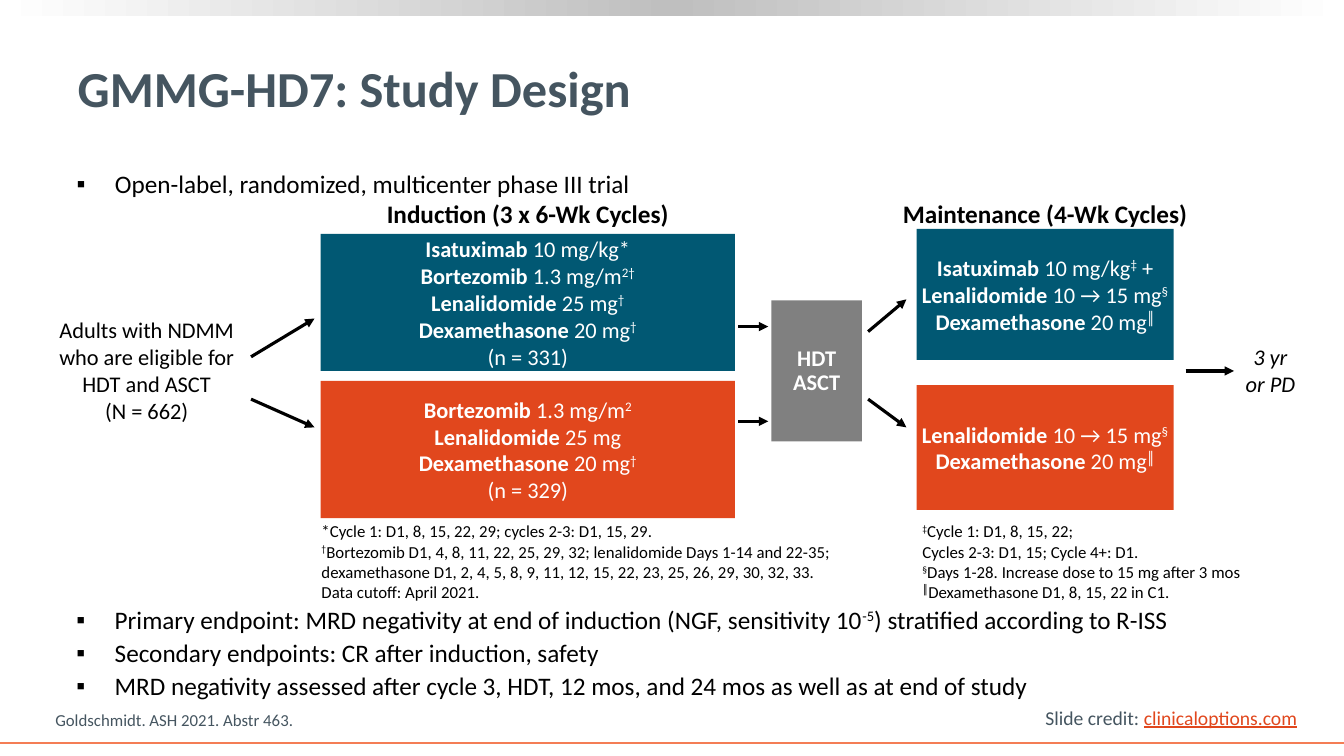
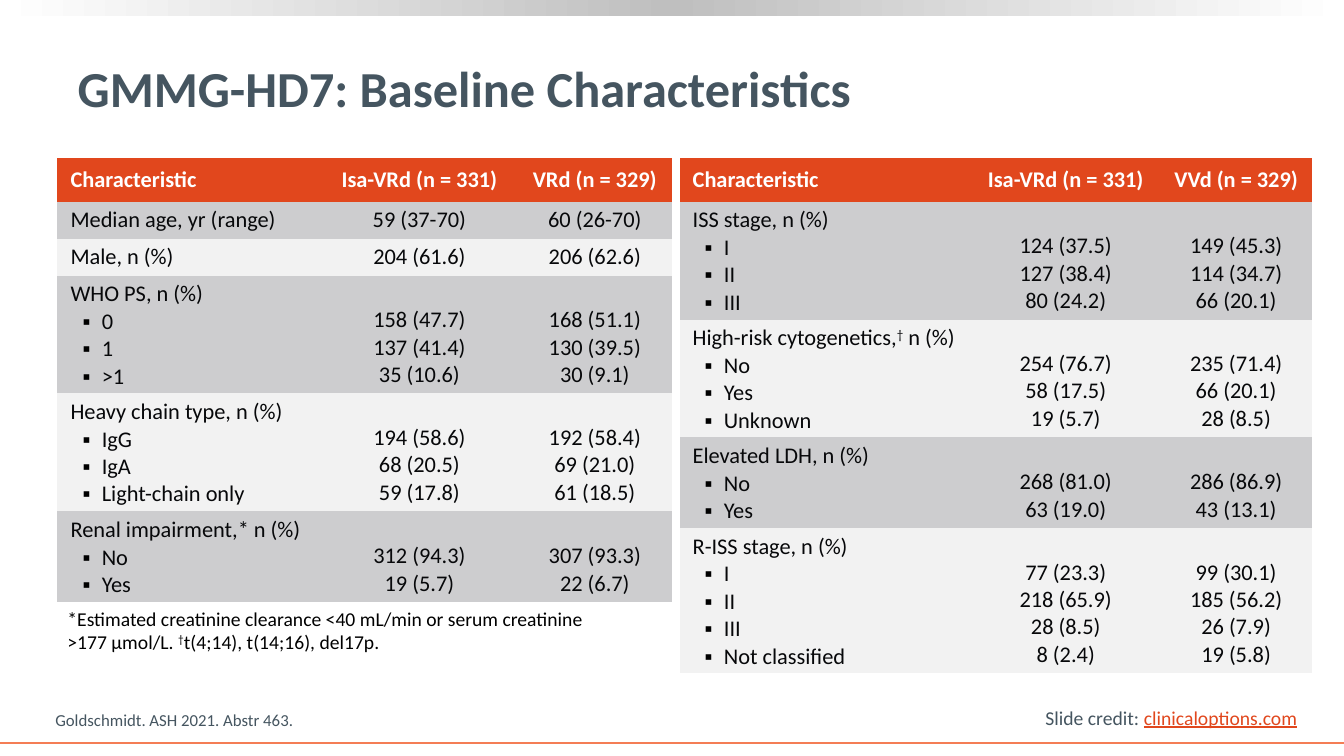
from copy import deepcopy

from lxml.etree import SubElement
from pptx import Presentation
from pptx.dml.color import RGBColor
from pptx.enum.shapes import MSO_CONNECTOR, MSO_SHAPE
from pptx.enum.text import MSO_ANCHOR, MSO_AUTO_SIZE, PP_ALIGN
from pptx.oxml.ns import qn
from pptx.util import Inches, Pt

FONT = "Calibri"
WHITE = RGBColor(0xFF, 0xFF, 0xFF)
BLACK = RGBColor(0x00, 0x00, 0x00)
INK = RGBColor(0x07, 0x08, 0x0A)
SLATE = RGBColor(0x45, 0x55, 0x60)
TEAL = RGBColor(0x01, 0x58, 0x73)
ORANGE = RGBColor(0xE1, 0x47, 0x1D)
CORAL = RGBColor(0xF4, 0x7D, 0x55)
GRAY = RGBColor(0x80, 0x80, 0x80)
SILVER = RGBColor(0xBF, 0xBF, 0xBF)
BANDS = (RGBColor(0xCD, 0xCD, 0xCF), RGBColor(0xF2, 0xF2, 0xF2))
NO_STYLE = "{2D5ABB26-0587-4C30-8999-92F81FD0307C}"

SLIDE_W, SLIDE_H = 13.33, 7.5


def inches(*lengths):
    return [Inches(n) for n in lengths]


# Text

def add_runs(p, markup, size, color, bold=False, italic=False):
    """Write markup as runs: ^raised^ and |bold|."""
    for i, part in enumerate(markup.split("^")):
        for j, piece in enumerate(part.split("|")):
            if not piece:
                continue
            r = p.add_run()
            r.text = piece
            r.font.name, r.font.size = FONT, Pt(size)
            r.font.color.rgb = color
            r.font.bold = bold or j % 2 == 1
            r.font.italic = italic
            if i % 2:
                r._r.get_or_add_rPr().set("baseline", "30000")


def add_bullet(p, indent, hanging):
    pPr = p._p.get_or_add_pPr()
    pPr.set("marL", str(Inches(indent)))
    pPr.set("indent", str(-Inches(hanging)))
    color = SubElement(pPr, qn("a:buClr"))
    SubElement(color, qn("a:srgbClr")).set("val", str(BLACK))
    SubElement(pPr, qn("a:buFont")).set("typeface", "Arial")
    SubElement(pPr, qn("a:buChar")).set("char", "▪")


def paragraphs(tf, lines):
    """Yield each line with its paragraph, adding paragraphs as needed."""
    for i, line in enumerate(lines):
        yield (tf.add_paragraph() if i else tf.paragraphs[0]), line


def write(tf, lines, size, color=BLACK, align=PP_ALIGN.LEFT, **style):
    for p, line in paragraphs(tf, lines):
        p.alignment = align
        add_runs(p, line, size, color, **style)


def write_bullets(tf, lines):
    tf.auto_size = MSO_AUTO_SIZE.NONE
    tf.word_wrap = True
    for i, (p, line) in enumerate(paragraphs(tf, lines)):
        p.line_spacing = 0.9
        p.space_before = Pt(4 if i else 0)
        add_bullet(p, 0.38, 0.38)
        add_runs(p, line, 18, BLACK)


def add_text(slide, box, lines, size, color=BLACK, wrap=True, **style):
    tf = slide.shapes.add_textbox(*inches(*box)).text_frame
    tf.word_wrap = wrap
    write(tf, lines, size, color, **style)
    return tf


# Shapes

def add_block(slide, box, fill, lines=(), **style):
    sp = slide.shapes.add_shape(MSO_SHAPE.RECTANGLE, *inches(*box))
    sp.shadow.inherit = False
    sp.line.fill.background()
    sp.fill.solid()
    sp.fill.fore_color.rgb = fill
    tf = sp.text_frame
    tf.word_wrap = False
    tf.vertical_anchor = MSO_ANCHOR.MIDDLE
    write(tf, lines, 16, WHITE, PP_ALIGN.CENTER, **style)
    return sp


def add_line(slide, start, end, color, width):
    line = slide.shapes.add_connector(MSO_CONNECTOR.STRAIGHT, *inches(*start, *end))
    line.line.color.rgb = color
    line.line.width = Pt(width)
    SubElement(line._element.spPr, qn("a:effectLst"))
    return line


def add_arrows(slide, x1, x2, *heights):
    """Draw one arrow from x1 to x2 for each (start y, end y)."""
    for y1, y2 in heights:
        arrow = add_line(slide, (x1, y1), (x2, y2), BLACK, 2.25)
        ln = arrow._element.spPr.find(qn("a:ln"))
        SubElement(ln, qn("a:tailEnd")).set("type", "triangle")


# Shared slide parts

def add_top_band(slide):
    sp = add_block(slide, (0, 0, SLIDE_W, 0.16), SILVER)
    sp.fill.gradient()
    sp.fill.gradient_angle = 0
    stops = sp._element.spPr.find(qn("a:gradFill")).find(qn("a:gsLst"))
    stops.insert(1, deepcopy(stops[0]))
    for stop, position, color in zip(sp.fill.gradient_stops, (0, 0.5, 1),
                                     (WHITE, SILVER, WHITE)):
        stop.position = position
        stop.color.rgb = color


def add_footer(slide):
    add_line(slide, (0, 7.37), (SLIDE_W, 7.37), CORAL, 1.5)
    source = add_text(slide, (0.45, 6.99, 8.59, 0.3),
                      ["Goldschmidt. ASH 2021. Abstr 463."], 12, SLATE)
    source.vertical_anchor = MSO_ANCHOR.BOTTOM
    credit = add_text(slide, (10.27, 6.95, 2.72, 0.34),
                      ["Slide credit: "], 14, SLATE, wrap=False)
    add_runs(credit.paragraphs[0], "clinicaloptions.com", 14, ORANGE)
    credit.paragraphs[0].runs[-1].font.underline = True


def place(shape, box):
    shape.left, shape.top, shape.width, shape.height = inches(*box)


def new_slide(prs, layout, title):
    slide = prs.slides.add_slide(prs.slide_layouts[layout])
    add_top_band(slide)
    place(slide.shapes.title, (0.67, 0.26, 11.89, 1.21))
    tf = slide.shapes.title.text_frame
    tf.auto_size = MSO_AUTO_SIZE.NONE
    tf.vertical_anchor = MSO_ANCHOR.MIDDLE
    write(tf, [title], 36, SLATE, bold=True)
    add_footer(slide)
    return slide


# Study design

def add_phase(slide, x, y, w, heading, arms, notes, notes_box):
    """Draw a treatment phase; arms are (offset, height, colour, lines)."""
    add_text(slide, (x - 0.4, y, w + 0.8, 0.4), [heading], 18,
             align=PP_ALIGN.CENTER, bold=True)
    for dy, h, fill, lines in arms:
        add_block(slide, (x, y + dy, w, h), fill, lines)
    dx, notes_w = notes_box
    add_text(slide, (x + dx, y + 3.2, notes_w, 0.91), notes, 12)


def study_design(prs):
    slide = new_slide(prs, 1, "GMMG-HD7: Study Design")
    body = slide.placeholders[1]
    place(body, (0.66, 1.65, 11.9, 5.09))
    write_bullets(body.text_frame,
                  ["Open-label, randomized, multicenter phase III trial"])

    add_text(slide, (0.33, 3.09, 2.25, 1.18),
             ["Adults with NDMM who are eligible for HDT and ASCT", "(N = 662)"],
             16, align=PP_ALIGN.CENTER)
    add_arrows(slide, 2.49, 3.12, (3.54, 3.16), (3.96, 4.24))
    add_phase(
        slide, 3.18, 1.92, 4.11, "Induction (3 x 6-Wk Cycles)",
        [(0.4, 1.36, TEAL,
          ["|Isatuximab| 10 mg/kg*", "|Bortezomib| 1.3 mg/m^2†^",
           "|Lenalidomide| 25 mg^†^", "|Dexamethasone| 20 mg^†^", "(n = 331)"]),
         (1.86, 1.36, ORANGE,
          ["|Bortezomib| 1.3 mg/m^2^", "|Lenalidomide| 25 mg",
           "|Dexamethasone| 20 mg^†^", "(n = 329)"])],
        ["*Cycle 1: D1, 8, 15, 22, 29; cycles 2-3: D1, 15, 29.",
         "^†^Bortezomib D1, 4, 8, 11, 22, 25, 29, 32; lenalidomide Days 1-14 and "
         "22-35; dexamethasone D1, 2, 4, 5, 8, 9, 11, 12, 15, 22, 23, 25, 26, 29, "
         "30, 32, 33.",
         "Data cutoff: April 2021."],
        (-0.09, 5.42))
    add_arrows(slide, 7.32, 7.62, (3.24, 3.24), (4.18, 4.18))
    transplant = add_block(slide, (7.65, 2.98, 0.9, 1.4), GRAY,
                           ["HDT", "ASCT"], bold=True)
    for p in transplant.text_frame.paragraphs:
        p.line_spacing = 0.9
    add_arrows(slide, 8.61, 8.99, (3.29, 2.97), (3.96, 4.24))

    doublet = ["|Lenalidomide| 10 → 15 mg^§^", "|Dexamethasone| 20 mg^║^"]
    add_phase(
        slide, 9.09, 1.92, 2.55, "Maintenance (4-Wk Cycles)",
        [(0.35, 1.3, TEAL, ["|Isatuximab| 10 mg/kg^‡^ +"] + doublet),
         (1.9, 1.24, ORANGE, doublet)],
        ["^‡^Cycle 1: D1, 8, 15, 22;", "Cycles 2-3: D1, 15; Cycle 4+: D1.",
         "^§^Days 1-28. Increase dose to 15 mg after 3 mos",
         "^║^Dexamethasone D1, 8, 15, 22 in C1."],
        (-0.04, 3.91))
    add_arrows(slide, 11.76, 12.24, (3.68, 3.68))
    add_text(slide, (12.15, 3.36, 0.9, 0.64), ["3 yr", "or PD"], 16,
             align=PP_ALIGN.CENTER, italic=True)

    endpoints = slide.shapes.add_textbox(*inches(0.66, 5.98, 11.9, 1))
    write_bullets(endpoints.text_frame, [
        "Primary endpoint: MRD negativity at end of induction "
        "(NGF, sensitivity 10^-5^) stratified according to R-ISS",
        "Secondary endpoints: CR after induction, safety",
        "MRD negativity assessed after cycle 3, HDT, 12 mos, and 24 mos "
        "as well as at end of study"])


# Baseline characteristics

def fill_cell(cell, fill, lines, color, anchor, align, bold=False):
    cell.fill.solid()
    cell.fill.fore_color.rgb = fill
    cell.margin_left = cell.margin_right = Inches(0.13)
    cell.margin_top = cell.margin_bottom = Inches(0.05)
    cell.vertical_anchor = anchor
    write(cell.text_frame, lines, 16, color, align, bold=bold)


def add_characteristics(slide, x, y, widths, arms, groups):
    """Add a table; groups are (heading, levels, first arm, second arm)."""
    heights = [0.43] + [0.09 + 0.27 * (1 + len(g[1])) for g in groups]
    frame = slide.shapes.add_table(len(heights), len(widths),
                                   *inches(x, y, sum(widths), sum(heights)))
    table = frame.table
    table.horz_banding = False
    table._tbl.tblPr.find(qn("a:tableStyleId")).text = NO_STYLE
    for column, w in zip(table.columns, widths):
        column.width = Inches(w)
    for row, h in zip(table.rows, heights):
        row.height = Inches(h)

    aligns = (PP_ALIGN.LEFT, PP_ALIGN.CENTER, PP_ALIGN.CENTER)
    for c, name in enumerate(("Characteristic", *arms)):
        fill_cell(table.cell(0, c), ORANGE, [name], WHITE, MSO_ANCHOR.MIDDLE,
                  aligns[c], bold=True)
    for i, (heading, levels, *values) in enumerate(groups):
        for c, lines in enumerate(([heading] + levels, *values)):
            fill_cell(table.cell(i + 1, c), BANDS[i % 2], lines, INK,
                      MSO_ANCHOR.BOTTOM, aligns[c])
        for p in table.cell(i + 1, 0).text_frame.paragraphs[1:]:
            add_bullet(p, 0.31, 0.19)


def baseline_characteristics(prs):
    slide = new_slide(prs, 5, "GMMG-HD7: Baseline Characteristics")
    add_characteristics(
        slide, 0.57, 1.57, (2.62, 1.94, 1.54),
        ("Isa-VRd (n = 331)", "VRd (n = 329)"),
        [("Median age, yr (range)", [], ["59 (37-70)"], ["60 (26-70)"]),
         ("Male, n (%)", [], ["204 (61.6)"], ["206 (62.6)"]),
         ("WHO PS, n (%)", ["0", "1", ">1"],
          ["158 (47.7)", "137 (41.4)", "35 (10.6)"],
          ["168 (51.1)", "130 (39.5)", "30 (9.1)"]),
         ("Heavy chain type, n (%)", ["IgG", "IgA", "Light-chain only"],
          ["194 (58.6)", "68 (20.5)", "59 (17.8)"],
          ["192 (58.4)", "69 (21.0)", "61 (18.5)"]),
         ("Renal impairment,* n (%)", ["No", "Yes"],
          ["312 (94.3)", "19 (5.7)"], ["307 (93.3)", "22 (6.7)"])])
    add_characteristics(
        slide, 6.74, 1.57, (2.89, 1.88, 1.5),
        ("Isa-VRd (n = 331)", "VVd (n = 329)"),
        [("ISS stage, n (%)", ["I", "II", "III"],
          ["124 (37.5)", "127 (38.4)", "80 (24.2)"],
          ["149 (45.3)", "114 (34.7)", "66 (20.1)"]),
         ("High-risk cytogenetics,^†^ n (%)", ["No", "Yes", "Unknown"],
          ["254 (76.7)", "58 (17.5)", "19 (5.7)"],
          ["235 (71.4)", "66 (20.1)", "28 (8.5)"]),
         ("Elevated LDH, n (%)", ["No", "Yes"],
          ["268 (81.0)", "63 (19.0)"], ["286 (86.9)", "43 (13.1)"]),
         ("R-ISS stage, n (%)", ["I", "II", "III", "Not classified"],
          ["77 (23.3)", "218 (65.9)", "28 (8.5)", "8 (2.4)"],
          ["99 (30.1)", "185 (56.2)", "26 (7.9)", "19 (5.8)"])])
    add_text(slide, (0.57, 5.97, 6.02, 0.57),
             ["*Estimated creatinine clearance <40 mL/min or serum creatinine",
              ">177 µmol/L. ^†^t(4;14), t(14;16), del17p."], 14)


def main():
    prs = Presentation()
    prs.slide_width, prs.slide_height = inches(SLIDE_W, SLIDE_H)
    study_design(prs)
    baseline_characteristics(prs)
    prs.save("out.pptx")


if __name__ == "__main__":
    main()
